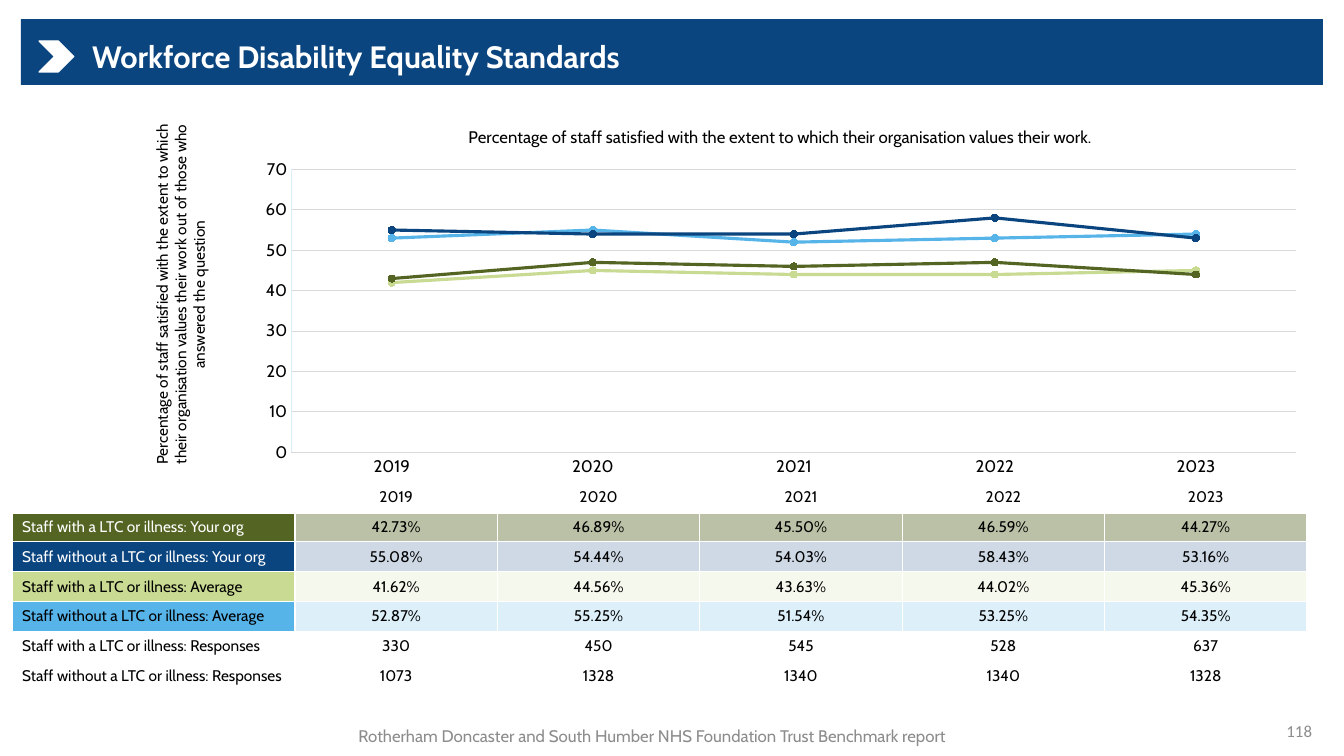
from lxml import etree
from pptx import Presentation
from pptx.chart.data import CategoryChartData
from pptx.dml.color import RGBColor
from pptx.enum.chart import XL_CHART_TYPE, XL_MARKER_STYLE, XL_TICK_MARK
from pptx.enum.shapes import MSO_SHAPE
from pptx.enum.text import MSO_ANCHOR, PP_ALIGN
from pptx.oxml import parse_xml
from pptx.oxml.ns import qn
from pptx.util import Pt

PX = 9071.43
LEFT, CENTER, RIGHT = PP_ALIGN.LEFT, PP_ALIGN.CENTER, PP_ALIGN.RIGHT
MIDDLE, TOP = MSO_ANCHOR.MIDDLE, MSO_ANCHOR.TOP
RECTANGLE, CHEVRON = MSO_SHAPE.RECTANGLE, MSO_SHAPE.CHEVRON
LINE_MARKERS = XL_CHART_TYPE.LINE_MARKERS
NO_TICK = XL_TICK_MARK.NONE
CIRCLE = XL_MARKER_STYLE.CIRCLE
NAVY = RGBColor(0x0B, 0x45, 0x7F)
SKY = RGBColor(0x56, 0xB4, 0xE9)
OLIVE = RGBColor(0x54, 0x64, 0x22)
LIME = RGBColor(0xC9, 0xDA, 0x92)
PALE_BLUE = RGBColor(0xDB, 0xEF, 0xF9)
GRID_GRAY = RGBColor(0xD9, 0xD9, 0xD9)
FOOTER_GRAY = RGBColor(0x8C, 0x8C, 0x8C)
WHITE = RGBColor(255, 255, 255)
BLACK = RGBColor(0, 0, 0)
CHART_NS = "http://schemas.openxmlformats.org/drawingml/2006/chart"

TABLE_WIDTH, TABLE_HEIGHT, LABEL_WIDTH = 1295, 209, 283
YEARS = ["2019", "2020", "2021", "2022", "2023"]
RESULTS = [
    ("Staff with a LTC or illness: Your org", OLIVE, 40, WHITE, [42.73, 46.89, 45.50, 46.59, 44.27]),
    ("Staff without a LTC or illness: Your org", NAVY, 20, WHITE, [55.08, 54.44, 54.03, 58.43, 53.16]),
    ("Staff with a LTC or illness: Average", LIME, 17, BLACK, [41.62, 44.56, 43.63, 44.02, 45.36]),
    ("Staff without a LTC or illness: Average", SKY, 20, BLACK, [52.87, 55.25, 51.54, 53.25, 54.35]),
]
RESPONSES = [
    ("Staff with a LTC or illness: Responses", [330, 450, 545, 528, 637]),
    ("Staff without a LTC or illness: Responses", [1073, 1328, 1340, 1340, 1328]),
]


def px(*lengths):
    return [round(length * PX) for length in lengths]


def write(frame, text, size, color, align, anchor=MIDDLE, font="Cabin", bold=False):
    frame.word_wrap = True
    frame.vertical_anchor = anchor
    paragraph = frame.paragraphs[0]
    paragraph.alignment = align
    run = paragraph.add_run()
    run.text = text
    run.font.size = Pt(size)
    run.font.name = font
    run.font.bold = bold
    run.font.color.rgb = color


presentation = Presentation()
presentation.slide_width, presentation.slide_height = px(1344, 756)
slide = presentation.slides.add_slide(presentation.slide_layouts[5])

for preset, box, fill, line in ((RECTANGLE, (21, 19, 1302, 66), NAVY, None),
                                (CHEVRON, (39, 41, 35, 31), WHITE, WHITE)):
    shape = slide.shapes.add_shape(preset, *px(*box))
    shape.shadow.inherit = False
    shape.fill.solid()
    shape.fill.fore_color.rgb = fill
    if line is None:
        shape.line.fill.background()
    else:
        shape.line.color.rgb = line
        shape.line.width = Pt(0.75)

title = slide.shapes.title
title.left, title.top, title.width, title.height = px(82, 37, 969, 44)
write(title.text_frame, "Workforce Disability Equality Standards", 22, WHITE, LEFT, bold=True)
title.text_frame.paragraphs[0].line_spacing = 0.9
slide.shapes._spTree.append(title._element)

axis_label = slide.shapes.add_textbox(*px(-6, 261, 374, 67))
axis_label.rotation = 270
write(axis_label.text_frame,
      "Percentage of staff satisfied with the extent to which their organisation "
      "values their work out of those who answered the question",
      11, BLACK, CENTER, TOP)

chart_data = CategoryChartData()
chart_data.categories = YEARS
plotted = [RESULTS[index] for index in (2, 3, 0, 1)]
for number, (label, color, tint, label_color, values) in enumerate(plotted, 1):
    chart_data.add_series(f"Series {number}", [round(value) for value in values])
chart = slide.shapes.add_chart(LINE_MARKERS, *px(244, 110, 1074, 374), chart_data).chart
chart.has_legend = False
chart.font.name = "Cabin"
chart.font.size = Pt(10)
chart.font.color.rgb = BLACK
chart.has_title = True
write(chart.chart_title.text_frame,
      "Percentage of staff satisfied with the extent to which their organisation values their work.",
      12, BLACK, CENTER)
plot = chart.plots[0]
plot.vary_by_categories = False
for series, (label, color, tint, label_color, values) in zip(plot.series, plotted):
    series.smooth = False
    series.format.line.color.rgb = color
    series.format.line.width = Pt(2.25)
    series.marker.style = CIRCLE
    series.marker.size = 5
    series.marker.format.fill.solid()
    series.marker.format.fill.fore_color.rgb = color
    series.marker.format.line.color.rgb = color

value_axis = chart.value_axis
value_axis.minimum_scale, value_axis.maximum_scale, value_axis.major_unit = 0, 70, 10
value_axis.tick_labels.number_format = "0"
value_axis.tick_labels.number_format_is_linked = False
value_axis.has_major_gridlines = True
value_axis.major_gridlines.format.line.color.rgb = GRID_GRAY
value_axis.major_gridlines.format.line.width = Pt(0.75)
for axis, color, width in ((chart.category_axis, GRID_GRAY, 0.75), (value_axis, PALE_BLUE, 0.25)):
    axis.major_tick_mark = axis.minor_tick_mark = NO_TICK
    axis.format.line.color.rgb = color
    axis.format.line.width = Pt(width)
    axis.tick_labels.font.size = Pt(12)
    axis.tick_labels.font.name = "Cabin"
    axis.tick_labels.font.color.rgb = BLACK

plot_area = chart._chartSpace.find(".//" + qn("c:plotArea"))
chart_title = chart._chartSpace.find(".//" + qn("c:title"))
for parent, position, settings in (
    (plot_area, 0, (("layoutTarget", "inner"), ("xMode", "edge"), ("yMode", "edge"),
                    ("x", 0.044), ("y", 0.159), ("w", 0.936), ("h", 0.757))),
    (chart_title, 1, (("xMode", "edge"), ("yMode", "edge"), ("x", 0.206), ("y", 0.034))),
):
    for layout in parent.findall(qn("c:layout")):
        parent.remove(layout)
    items = "".join(f'<c:{name} val="{value}"/>' for name, value in settings)
    parent.insert(position, parse_xml(
        f'<c:layout xmlns:c="{CHART_NS}"><c:manualLayout>{items}</c:manualLayout></c:layout>'))

rows = [("", None, None, BLACK, YEARS)]
for label, color, tint, label_color, values in RESULTS:
    rows.append((label, color, tint, label_color, [f"{value:.2f}%" for value in values]))
for label, values in RESPONSES:
    rows.append((label, None, None, BLACK, [str(value) for value in values]))

table = slide.shapes.add_table(
    len(rows), len(YEARS) + 1, *px(12, 482, TABLE_WIDTH, TABLE_HEIGHT)).table
table.first_row = False
table.horz_banding = False
year_width = (TABLE_WIDTH - LABEL_WIDTH) / len(YEARS)
for index, column in enumerate(table.columns):
    column.width = px(year_width if index else LABEL_WIDTH)[0]
for row_index, (label, color, tint, label_color, values) in enumerate(rows):
    table.rows[row_index].height = px(TABLE_HEIGHT / len(rows))[0]
    for column_index, text in enumerate([label] + values):
        cell = table.cell(row_index, column_index)
        if text:
            write(cell.text_frame, text, 11, BLACK if column_index else label_color,
                  CENTER if column_index else LEFT)
        else:
            etree.SubElement(cell.text_frame.paragraphs[0]._p, qn("a:endParaRPr"), sz="1100")
        cell.vertical_anchor = MIDDLE
        if color is None:
            cell.fill.background()
        else:
            cell.fill.solid()
            cell.fill.fore_color.rgb = color
        properties = cell._tc.get_or_add_tcPr()
        if color is not None and column_index:
            fill_color = properties.find(".//" + qn("a:srgbClr"))
            etree.SubElement(fill_color, qn("a:alpha"), val=str(tint * 1000))
        for position, side in enumerate(("lnL", "lnR", "lnT", "lnB")):
            thick = (row_index, side) in ((0, "lnB"), (1, "lnT"))
            border = etree.Element(qn("a:" + side), w=str(Pt(3 if thick else 1)))
            border_fill = etree.SubElement(border, qn("a:solidFill"))
            etree.SubElement(border_fill, qn("a:srgbClr"), val=str(WHITE))
            properties.insert(position, border)

for box, text, align, font in (
    ((1020, 711, 302, 40), "118", RIGHT, "Calibri"),
    ((297, 716, 711, 39), "Rotherham Doncaster and South Humber NHS Foundation Trust Benchmark report",
     CENTER, "Cabin"),
):
    footer = slide.shapes.add_textbox(*px(*box))
    write(footer.text_frame, text, 12, FOOTER_GRAY, align, font=font)

presentation.save("out.pptx")
